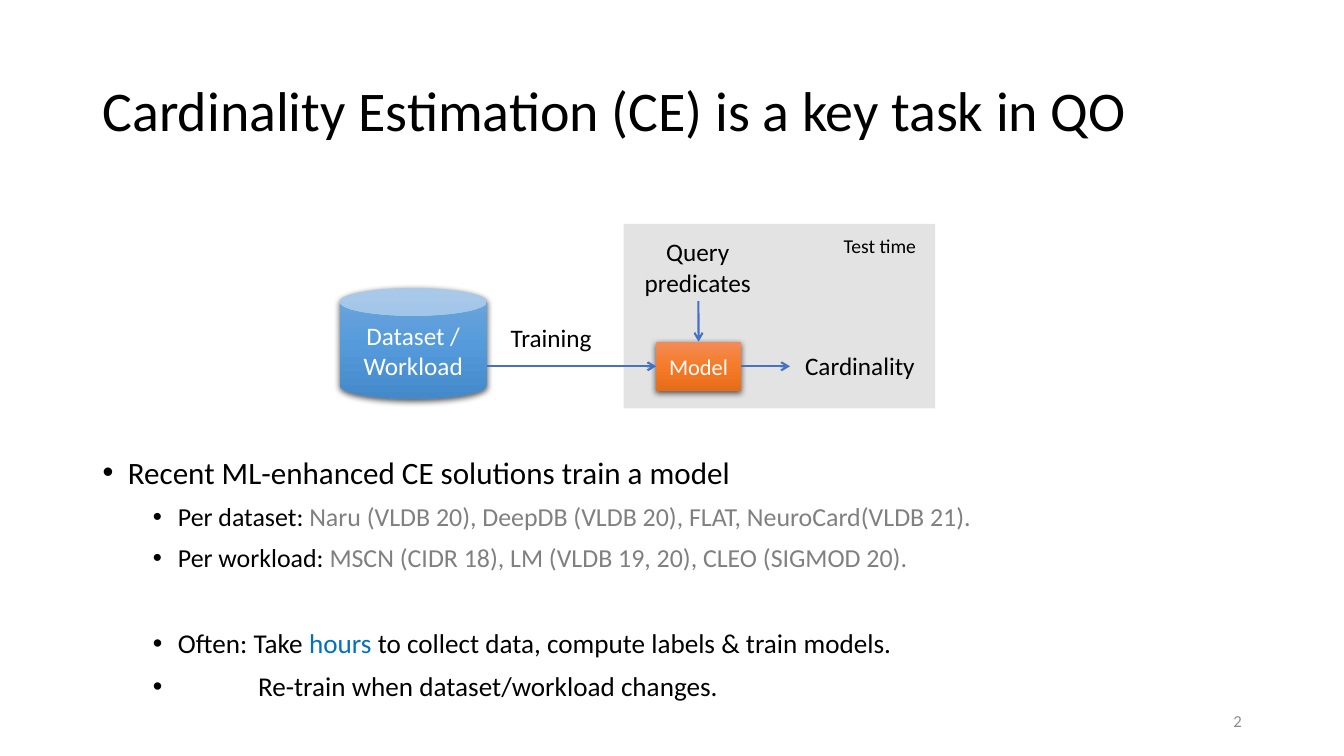
import pptx
import pptx.dml.color
import pptx.enum.shapes
import pptx.enum.text
import pptx.oxml
import pptx.oxml.ns
import pptx.util
from pptx.util import Cm
from lxml import etree

RGBColor = pptx.dml.color.RGBColor
SHAPE = pptx.enum.shapes.MSO_SHAPE
ALIGN = pptx.enum.text.PP_ALIGN
ANCHOR = pptx.enum.text.MSO_ANCHOR
qn = pptx.oxml.ns.qn

BLACK = RGBColor(0x00, 0x00, 0x00)
WHITE = RGBColor(0xFF, 0xFF, 0xFF)
GREY = RGBColor(0x80, 0x80, 0x80)
NUMBER_GREY = RGBColor(0x8C, 0x8C, 0x8C)
PANEL_GREY = RGBColor(0xC9, 0xC9, 0xC9)
HIGHLIGHT = RGBColor(0x00, 0x70, 0xC0)
ARROW_BLUE = RGBColor(0x44, 0x72, 0xC4)
BLUES = [RGBColor(0x71, 0xA6, 0xDB), RGBColor(0x55, 0x9B, 0xDB), RGBColor(0x44, 0x8A, 0xCA)]
ORANGES = [RGBColor(0xF1, 0x8C, 0x57), RGBColor(0xF6, 0x7B, 0x28), RGBColor(0xE5, 0x6C, 0x19)]


def write_text(shape, text, size, color, align, anchor):
    frame = shape.text_frame
    frame.word_wrap = True
    frame.vertical_anchor = anchor
    frame.text = text
    for paragraph in frame.paragraphs:
        paragraph.alignment = align
        paragraph.font.name = "Calibri"
        paragraph.font.size = pptx.util.Pt(size)
        paragraph.font.color.rgb = color


def add_node(kind, left, top, width, height, text, size, colors):
    """Add a box with a vertical three-colour gradient and a soft shadow."""
    shape = slide.shapes.add_shape(kind, Cm(left), Cm(top), Cm(width), Cm(height))
    shape.line.fill.background()
    shape.shadow.inherit = False
    namespace = pptx.oxml.ns.nsdecls("a")
    stops = "".join(
        f'<a:gs pos="{index * 50000}"><a:srgbClr val="{color}"/></a:gs>'
        for index, color in enumerate(colors))
    properties = shape._element.spPr
    properties.find(qn("a:prstGeom")).addnext(pptx.oxml.parse_xml(
        f'<a:gradFill {namespace}><a:gsLst>{stops}</a:gsLst>'
        '<a:lin ang="5400000" scaled="0"/></a:gradFill>'))
    properties.find(qn("a:effectLst")).append(pptx.oxml.parse_xml(
        f'<a:outerShdw {namespace} blurRad="57150" dist="19050" dir="5400000" algn="ctr" '
        'rotWithShape="0"><a:srgbClr val="000000"><a:alpha val="63000"/></a:srgbClr>'
        '</a:outerShdw>'))
    write_text(shape, text, size, WHITE, ALIGN.CENTER, ANCHOR.MIDDLE)
    return shape


presentation = pptx.Presentation()
presentation.slide_width = Cm(33.87)
presentation.slide_height = Cm(19.05)
slide = presentation.slides.add_slide(presentation.slide_layouts[1])

# Title
title = slide.shapes.title
title.left, title.top, title.width, title.height = Cm(2.33), Cm(1.02), Cm(29.21), Cm(3.68)
write_text(title, "Cardinality Estimation (CE) is a key task in QO", 40, BLACK,
           ALIGN.LEFT, ANCHOR.MIDDLE)
title.text_frame.paragraphs[0].line_spacing = 0.9

# Bullet list: level, text indent (cm), line spacing, space before, size, coloured parts
bullets = [
    (0, 0.64, 0.8, 10, 22.2, [("Recent ML-enhanced CE solutions train a model", BLACK)]),
    (1, 1.9, 1.1, 5, 18.5, [
        ("Per dataset: ", BLACK),
        ("Naru (VLDB 20), DeepDB (VLDB 20), FLAT, NeuroCard(VLDB 21).", GREY)]),
    (1, 1.9, 1.1, 5, 18.5, [
        ("Per workload: ", BLACK),
        ("MSCN (CIDR 18), LM (VLDB 19, 20), CLEO (SIGMOD 20).", GREY)]),
    (1, 1.9, 1.1, 36, 19.4, [
        ("Often: Take ", BLACK), ("hours", HIGHLIGHT),
        (" to collect data, compute labels & train models.", BLACK)]),
    (1, 3.92, 1.1, 5, 19.4, [("Re-train when dataset/workload changes.", BLACK)]),
]
body = slide.placeholders[1]
body.left, body.top, body.width, body.height = Cm(2.33), Cm(11.48), Cm(29.21), Cm(6.55)
frame = body.text_frame
frame.auto_size = pptx.enum.text.MSO_AUTO_SIZE.NONE
for index, (level, indent, spacing, before, size, parts) in enumerate(bullets):
    paragraph = frame.add_paragraph() if index else frame.paragraphs[0]
    paragraph.level = level
    paragraph.line_spacing = spacing
    paragraph.space_before = pptx.util.Pt(before)
    properties = paragraph._p.get_or_add_pPr()
    properties.set("marL", str(Cm(indent)))
    properties.set("indent", str(Cm(1.27 * level) - Cm(indent)))
    etree.SubElement(properties, qn("a:buFont"), typeface="Arial")
    etree.SubElement(properties, qn("a:buChar"), char="•")
    paragraph.font.name = "Calibri"
    paragraph.font.size = pptx.util.Pt(size)
    for text, color in parts:
        run = paragraph.add_run()
        run.text = text
        run.font.color.rgb = color

# Test time panel, half transparent
panel = slide.shapes.add_shape(SHAPE.RECTANGLE, Cm(15.72), Cm(5.64), Cm(7.85), Cm(4.65))
panel.shadow.inherit = False
panel.line.fill.background()
panel.fill.solid()
panel.fill.fore_color.rgb = PANEL_GREY
panel_color = panel._element.spPr.find(qn("a:solidFill")).find(qn("a:srgbClr"))
etree.SubElement(panel_color, qn("a:alpha"), val="50000")

# Data store and model
add_node(SHAPE.CAN, 8.56, 7.26, 3.71, 2.79, "Dataset / Workload", 18, BLUES)
model = add_node(SHAPE.RECTANGLE, 16.54, 8.61, 2.13, 1.24, "Model", 16, ORANGES)

# Labels and slide number
labels = [
    (12.62, 8.0, 3.0, 1.24, "Training", 18, BLACK, ALIGN.LEFT, ANCHOR.TOP),
    (15.72, 5.84, 3.73, 2.18, "Query\npredicates", 18, BLACK, ALIGN.CENTER, ANCHOR.TOP),
    (20.04, 8.71, 3.84, 1.24, "Cardinality", 18, BLACK, ALIGN.LEFT, ANCHOR.TOP),
    (21.01, 5.77, 2.74, 1.04, "Test time", 14, BLACK, ALIGN.LEFT, ANCHOR.TOP),
    (23.93, 17.65, 7.62, 1.02, "2", 12, NUMBER_GREY, ALIGN.RIGHT, ANCHOR.MIDDLE),
]
for left, top, width, height, *text_format in labels:
    label = slide.shapes.add_textbox(Cm(left), Cm(top), Cm(width), Cm(height))
    write_text(label, *text_format)

# Arrows: start, end, model side joined at the start, model side joined at the end
arrows = [
    ((12.27, 9.23), (16.54, 9.23), None, 1),
    ((18.67, 9.23), (19.91, 9.23), 3, None),
    ((17.6, 7.59), (17.6, 8.61), None, 0),
]
for start, end, start_side, end_side in arrows:
    arrow = slide.shapes.add_connector(
        pptx.enum.shapes.MSO_CONNECTOR.STRAIGHT, *map(Cm, start + end))
    if start_side is not None:
        arrow.begin_connect(model, start_side)
    if end_side is not None:
        arrow.end_connect(model, end_side)
    arrow.line.color.rgb = ARROW_BLUE
    arrow.line.width = pptx.util.Pt(1.5)
    etree.SubElement(arrow.line._get_or_add_ln(), qn("a:tailEnd"), type="arrow")
    etree.SubElement(arrow._element.spPr, qn("a:effectLst"))

presentation.save("out.pptx")
